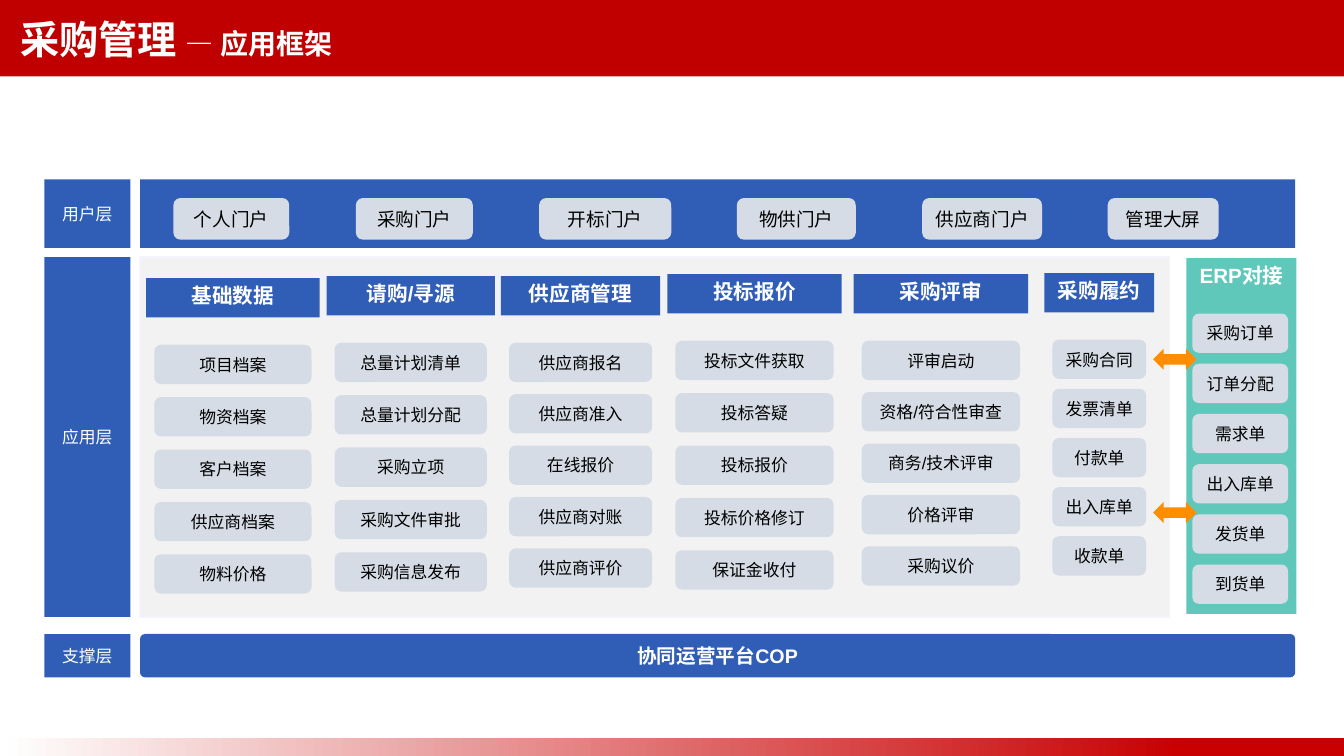
from dataclasses import dataclass

from pptx import Presentation
from pptx.dml.color import RGBColor
from pptx.enum.lang import MSO_LANGUAGE_ID
from pptx.enum.shapes import MSO_SHAPE
from pptx.enum.text import MSO_ANCHOR, MSO_AUTO_SIZE, PP_ALIGN
from pptx.util import Inches, Pt


@dataclass(frozen=True)
class Theme:
    font: str = "Arial"
    red: str = "C00000"
    bright_red: str = "C80000"
    blue: str = "305EB6"
    teal: str = "5FC8BA"
    panel: str = "F2F2F2"
    panel_edge: str = "F3F4FE"
    card: str = "D6DCE5"
    orange: str = "FF8D00"
    white: str = "FFFFFF"
    black: str = "000000"
    title: float = 28
    subtitle: float = 20
    heading: float = 14.7
    platform: float = 14
    portal: float = 13.3
    body: float = 12


THEME = Theme()


def add_text(p, text, size=THEME.body, color=THEME.white, bold=False):
    r = p.add_run()
    r.text = text
    r.font.name = THEME.font
    r.font.size = Pt(size)
    r.font.bold = bold
    r.font.color.rgb = RGBColor.from_string(color)
    r.font.language_id = MSO_LANGUAGE_ID.SIMPLIFIED_CHINESE


class Board:
    """Draws on one slide; every length is a percentage of the slide's size."""

    def __init__(self, prs, theme):
        self.prs, self.theme = prs, theme
        self.s = prs.slides.add_slide(prs.slide_layouts[5])

    def place(self, x, y, w, h):
        sw, sh = self.prs.slide_width, self.prs.slide_height
        return [round(share * side / 100)
                for share, side in zip((x, y, w, h), (sw, sh, sw, sh))]

    def block(self, box, fill, text="", kind=MSO_SHAPE.RECTANGLE, edge=None,
              radius=None, anchor=MSO_ANCHOR.MIDDLE, inset=(0.1, 0.05),
              wrap=True, **style):
        sp = self.s.shapes.add_shape(kind, *self.place(*box))
        sp.shadow.inherit = False
        sp.fill.solid()
        sp.fill.fore_color.rgb = RGBColor.from_string(fill)
        if edge:
            sp.line.color.rgb = RGBColor.from_string(edge)
            sp.line.width = Pt(1)
        else:
            sp.line.fill.background()
        if radius:
            sp.adjustments[0] = radius
        if text:
            tf = sp.text_frame
            tf.word_wrap = wrap
            tf.vertical_anchor = anchor
            tf.margin_left = tf.margin_right = Inches(inset[0])
            tf.margin_top = tf.margin_bottom = Inches(inset[1])
            p = tf.paragraphs[0]
            p.alignment = PP_ALIGN.CENTER
            add_text(p, text, **style)
        return sp

    def heading(self, box, text, fill):
        self.block(box, fill, text, anchor=MSO_ANCHOR.TOP,
                   size=self.theme.heading, bold=True)

    def cards(self, x, y, w, pitch, labels):
        for i, label in enumerate(labels):
            self.block((x, y + i * pitch, w, 5.2), self.theme.card, label,
                       MSO_SHAPE.ROUNDED_RECTANGLE, inset=(0.08, 0.08),
                       color=self.theme.black)

    def module(self, x, y, w, pitch, name, labels):
        """A headed column whose cards sit just inside the heading's width."""
        self.heading((x, y, w, 5.2), name, self.theme.blue)
        self.cards(x + 0.6, y + 8.8, w - 1.2, pitch, labels)

    def portal(self, x, w, text):
        self.block((x, 26.2, w, 5.5), self.theme.card, text,
                   MSO_SHAPE.ROUNDED_RECTANGLE, radius=0.167, wrap=False,
                   size=self.theme.portal, color=self.theme.black)

    def exchange_arrow(self, y):
        self.block((85.8, y, 3.23, 2.8), self.theme.orange,
                   kind=MSO_SHAPE.LEFT_RIGHT_ARROW)

    def title(self, main, sub):
        band = self.block((0, 0, 100, 10.1), self.theme.red)
        title = self.s.shapes.title
        band.element.addnext(title.element)
        title.left, title.top, title.width, title.height = self.place(
            0.75, 0.8, 76.2, 8)
        tf = title.text_frame
        tf.word_wrap = True
        tf.auto_size = MSO_AUTO_SIZE.NONE
        tf.vertical_anchor = MSO_ANCHOR.TOP
        p = tf.paragraphs[0]
        p.alignment = PP_ALIGN.LEFT
        p.line_spacing = 1.1
        add_text(p, main, self.theme.title, bold=True)
        add_text(p, sub, self.theme.subtitle, bold=True)

    def footer(self):
        fill = self.block((0, 97.6, 100, 2.4), self.theme.red).fill
        fill.gradient()
        fill.gradient_angle = 0
        stops = ((0, self.theme.white), (0.88, self.theme.bright_red))
        for stop, (position, color) in zip(fill.gradient_stops, stops):
            stop.position = position
            stop.color.rgb = RGBColor.from_string(color)


LAYERS = [("用户层", 23.73, 9.07), ("应用层", 34, 47.6), ("支撑层", 83.87, 5.73)]
PORTALS = [
    (12.9, 8.62, "个人门户"), (26.48, 8.7, "采购门户"),
    (40.12, 9.83, "开标门户"), (54.83, 8.85, "物供门户"),
    (68.62, 8.92, "供应商门户"), (82.42, 8.25, "管理大屏"),
]
# left, top, width, card pitch, heading, cards
MODULES = [
    (10.88, 36.8, 12.9, 6.93, "基础数据",
     ["项目档案", "物资档案", "客户档案", "供应商档案", "物料价格"]),
    (24.3, 36.53, 12.52, 6.93, "请购/寻源",
     ["总量计划清单", "总量计划分配", "采购立项", "采购文件审批", "采购信息发布"]),
    (37.28, 36.53, 11.85, 6.8, "供应商管理",
     ["供应商报名", "供应商准入", "在线报价", "供应商对账", "供应商评价"]),
    (49.65, 36.27, 12.98, 6.93, "投标报价",
     ["投标文件获取", "投标答疑", "投标报价", "投标价格修订", "保证金收付"]),
    (63.52, 36.27, 12.98, 6.8, "采购评审",
     ["评审启动", "资格/符合性审查", "商务/技术评审", "价格评审", "采购议价"]),
    (77.7, 36.13, 8.18, 6.5, "采购履约",
     ["采购合同", "发票清单", "付款单", "出入库单", "收款单"]),
]
ERP_DOCUMENTS = ["采购订单", "订单分配", "需求单", "出入库单", "发货单", "到货单"]


def main():
    prs = Presentation()
    prs.slide_width, prs.slide_height = Inches(13.33), Inches(7.5)
    board = Board(prs, THEME)
    board.title("采购管理 ", "— 应用框架")
    board.footer()

    for name, y, h in LAYERS:
        board.block((3.3, y, 6.4, h), THEME.blue, name, inset=(0, 0))

    board.block((10.42, 23.73, 85.95, 9.07), THEME.blue)
    for portal in PORTALS:
        board.portal(*portal)

    board.block((10.42, 34, 76.58, 47.6), THEME.panel, edge=THEME.panel_edge)
    for module in MODULES:
        board.module(*module)

    board.heading((88.28, 34.13, 8.18, 47.07), "ERP对接", THEME.teal)
    board.cards(88.72, 41.47, 7.13, 6.64, ERP_DOCUMENTS)
    for y in (46.13, 66.4):
        board.exchange_arrow(y)

    board.block((10.42, 83.87, 85.95, 5.73), THEME.blue, "协同运营平台COP",
                MSO_SHAPE.ROUNDED_RECTANGLE, radius=0.115,
                size=THEME.platform, bold=True)
    prs.save("out.pptx")


if __name__ == "__main__":
    main()
